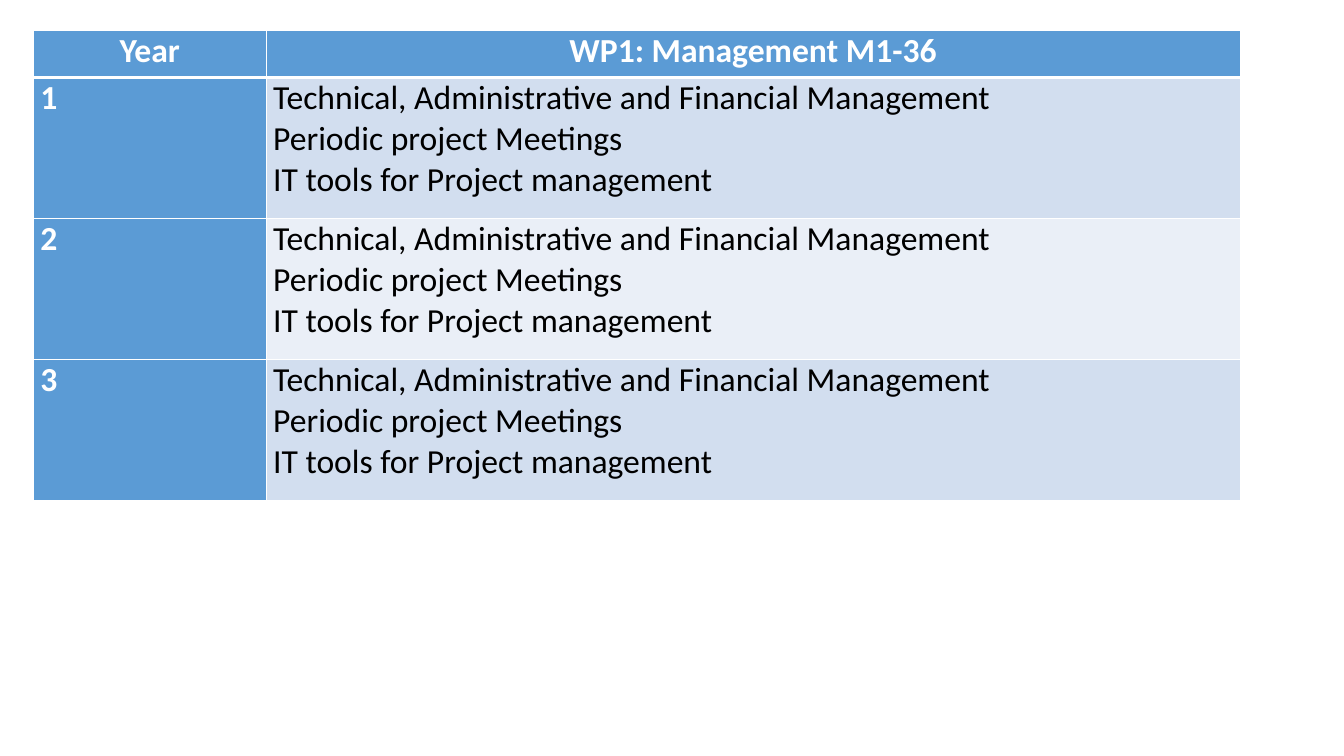
from dataclasses import dataclass

from lxml import etree
from pptx import Presentation
from pptx.dml.color import RGBColor
from pptx.enum.text import PP_ALIGN
from pptx.oxml.ns import qn
from pptx.table import _Cell
from pptx.util import Inches, Pt

LEFT = PP_ALIGN.LEFT
CENTER = PP_ALIGN.CENTER

WHITE = RGBColor(0xFF, 0xFF, 0xFF)
BLACK = RGBColor(0x00, 0x00, 0x00)
BLUE = RGBColor(0x5B, 0x9B, 0xD5)
PALE = RGBColor(0xD2, 0xDE, 0xEF)
LIGHT = RGBColor(0xEA, 0xEF, 0xF7)

FONT = "Calibri"
SIZE = Pt(24)
THIN = Pt(1)
THICK = Pt(3)
COLS = (2.31, 9.66)
ROWS = (0.47, 1.4, 1.4, 1.4)
TASKS = (
    "Technical, Administrative and Financial Management",
    "Periodic project Meetings",
    "IT tools for Project management",
)


@dataclass(frozen=True)
class Entry:
    lines: tuple[str, ...]
    fill: RGBColor
    color: RGBColor = WHITE
    bold: bool = True
    align: PP_ALIGN = LEFT
    top: int = THIN
    base: int = THIN


def add_edge(cell: _Cell, side: str, width: int) -> None:
    props = cell._tc.get_or_add_tcPr()
    line = etree.SubElement(props, qn(f"a:ln{side}"), w=str(width))
    fill = etree.SubElement(line, qn("a:solidFill"))
    etree.SubElement(fill, qn("a:srgbClr"), val=str(WHITE))


def fill_cell(cell: _Cell, entry: Entry) -> None:
    edges = {"L": THIN, "R": THIN, "T": entry.top, "B": entry.base}
    for side, width in edges.items():
        add_edge(cell, side, width)
    cell.fill.solid()
    cell.fill.fore_color.rgb = entry.fill
    cell.margin_left = cell.margin_right = Inches(0.07)
    cell.margin_top = cell.margin_bottom = 0
    frame = cell.text_frame
    for index, text in enumerate(entry.lines):
        para = frame.add_paragraph() if index else frame.paragraphs[0]
        para.alignment = entry.align
        run = para.add_run()
        run.text = text
        run.font.name = FONT
        run.font.size = SIZE
        run.font.bold = entry.bold
        run.font.color.rgb = entry.color


def plan_rows() -> list[tuple[Entry, ...]]:
    heads = ("Year", "WP1: Management M1-36")
    rows = [tuple(Entry((head,), BLUE, align=CENTER, base=THICK) for head in heads)]
    for year, tint in enumerate((PALE, LIGHT, PALE), start=1):
        top = THICK if year == 1 else THIN
        rows.append((
            Entry((str(year),), BLUE, top=top),
            Entry(TASKS, tint, BLACK, bold=False, top=top),
        ))
    return rows


def main() -> None:
    deck = Presentation()
    deck.slide_width = Inches(13.33)
    deck.slide_height = Inches(7.5)
    slide = deck.slides.add_slide(deck.slide_layouts[6])
    frame = slide.shapes.add_table(
        len(ROWS), len(COLS), Inches(0.33), Inches(0.3),
        Inches(sum(COLS)), Inches(sum(ROWS)),
    )
    table = frame.table
    for col, width in zip(table.columns, COLS):
        col.width = Inches(width)
    for row, height, entries in zip(table.rows, ROWS, plan_rows()):
        row.height = Inches(height)
        for cell, entry in zip(row.cells, entries):
            fill_cell(cell, entry)
    deck.save("out.pptx")


if __name__ == "__main__":
    main()
